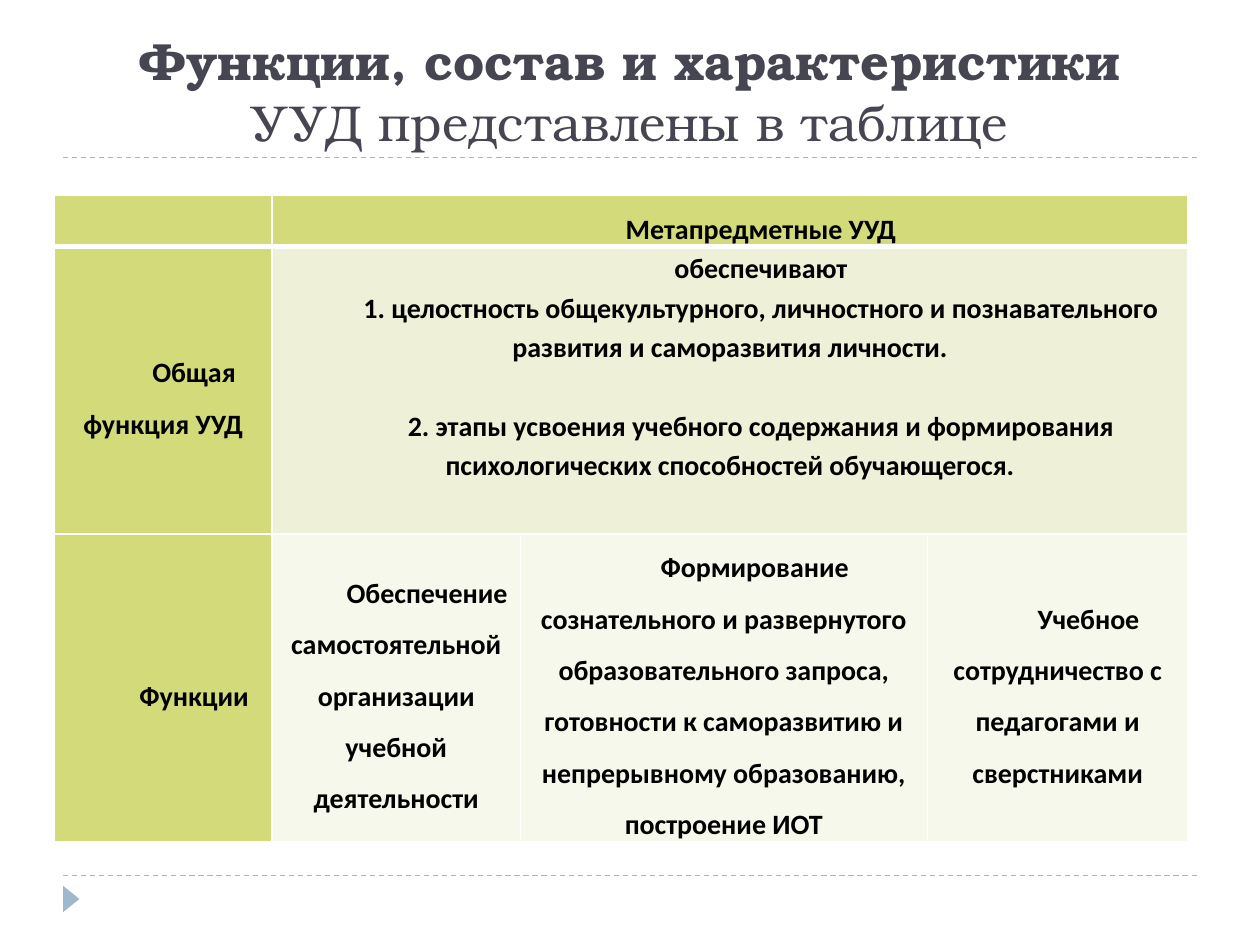
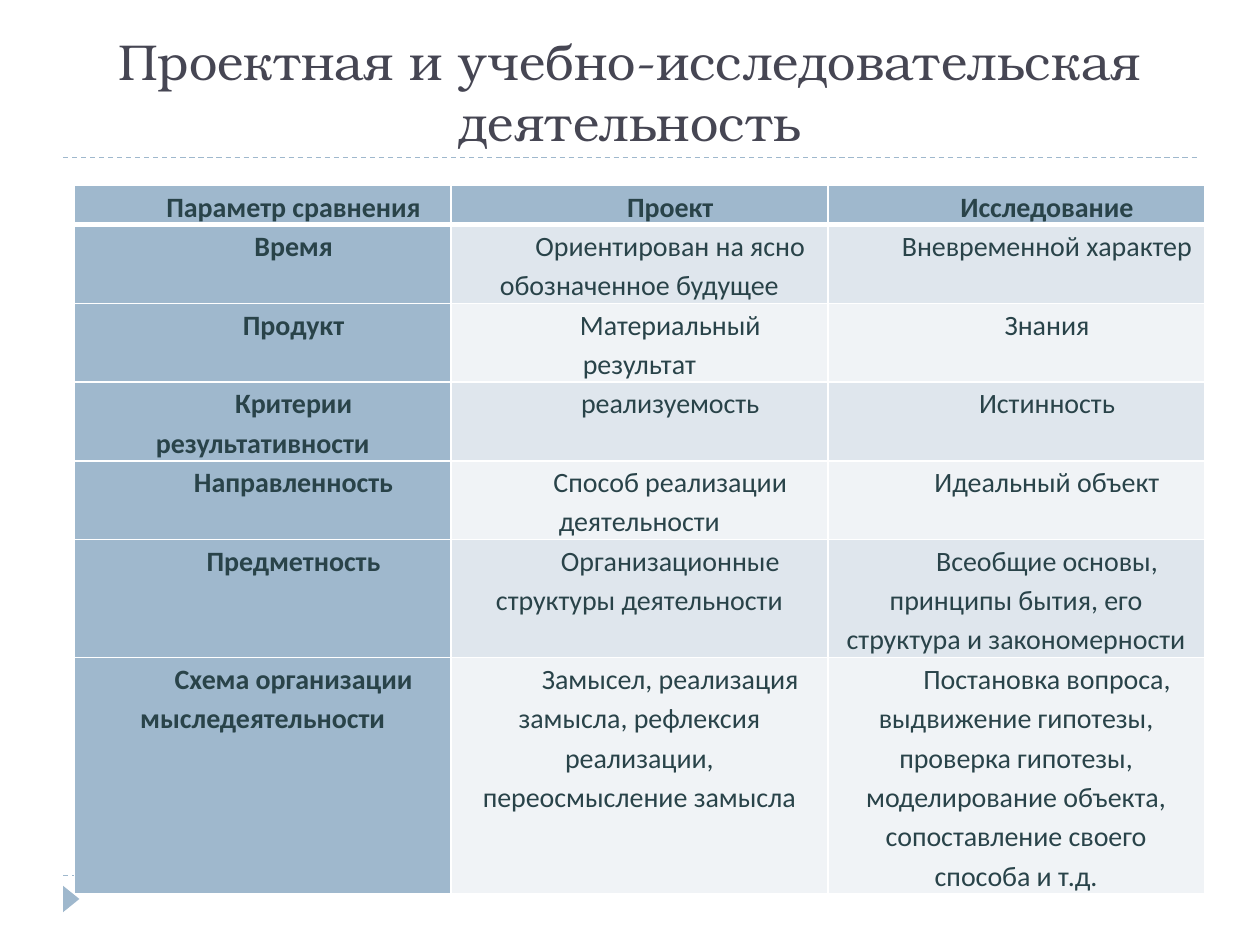
from dataclasses import dataclass

from lxml.etree import SubElement
from pptx import Presentation
from pptx.dml.color import RGBColor
from pptx.enum.dml import MSO_LINE
from pptx.enum.shapes import MSO_CONNECTOR, MSO_SHAPE
from pptx.enum.text import MSO_ANCHOR, MSO_AUTO_SIZE, PP_ALIGN
from pptx.oxml.ns import qn
from pptx.slide import Slide
from pptx.table import Table, _Cell
from pptx.util import Inches, Pt

WHITE = RGBColor(0xFF, 0xFF, 0xFF)
BLACK = RGBColor(0x00, 0x00, 0x00)
SLATE = RGBColor(0x46, 0x46, 0x53)
TEAL = RGBColor(0x29, 0x43, 0x49)
BLUE = RGBColor(0x9F, 0xB8, 0xCD)
MIST = RGBColor(0xDF, 0xE6, 0xED)
PALE = RGBColor(0xF0, 0xF3, 0xF6)
LIME = RGBColor(0xD2, 0xDA, 0x7A)
CREAM = RGBColor(0xEE, 0xF1, 0xD7)
IVORY = RGBColor(0xF7, 0xF8, 0xEC)

SERIF = "TeX Gyre Bonum"
SANS = "Calibri"
LINE = 0.31


@dataclass
class Part:
    text: str
    bold: bool = False


@dataclass
class Grid:
    left: float
    top: float
    widths: list[float]
    heights: list[float]
    rows: list[list[str]]
    accent: RGBColor
    bands: tuple[RGBColor, RGBColor]
    ink: RGBColor
    spacing: float
    anchor: MSO_ANCHOR
    bold: bool


def add_rule(slide: Slide, top: float) -> None:
    rule = slide.shapes.add_connector(
        MSO_CONNECTOR.STRAIGHT, Inches(0.5), Inches(top), Inches(9.5), Inches(top))
    rule.line.color.rgb = BLUE
    rule.line.width = Pt(0.75)
    rule.line.dash_style = MSO_LINE.DASH
    SubElement(rule._element.spPr, qn("a:effectLst"))


def add_frame(slide: Slide) -> None:
    for top in (6.95, 1.25):
        add_rule(slide, top)
    mark = slide.shapes.add_shape(
        MSO_SHAPE.ISOSCELES_TRIANGLE, Inches(0.46), Inches(7.07), Inches(0.21), Inches(0.13))
    mark.rotation = 90
    mark.shadow.inherit = False
    mark.fill.solid()
    mark.fill.fore_color.rgb = BLUE
    mark.line.fill.background()


def set_title(slide: Slide, parts: list[Part]) -> None:
    title = slide.shapes.title
    title.left, title.top = Inches(0.5), Inches(0.17)
    title.width, title.height = Inches(9), Inches(1.08)
    frame = title.text_frame
    frame.word_wrap = True
    frame.auto_size = MSO_AUTO_SIZE.NONE
    frame.vertical_anchor = MSO_ANCHOR.BOTTOM
    para = frame.paragraphs[0]
    para.alignment = PP_ALIGN.CENTER
    for part in parts:
        run = para.add_run()
        run.text = part.text
        run.font.name = SERIF
        run.font.size = Pt(28.8)
        run.font.bold = part.bold
        run.font.color.rgb = SLATE


def set_border(cell: _Cell, row: int) -> None:
    sides = {"L": 1, "R": 1, "T": 3 if row == 1 else 1, "B": 3 if row == 0 else 1}
    props = cell._tc.get_or_add_tcPr()
    for side, width in sides.items():
        edge = SubElement(props, qn(f"a:ln{side}"), w=str(Pt(width)))
        fill = SubElement(edge, qn("a:solidFill"))
        SubElement(fill, qn("a:srgbClr"), val=str(WHITE))


def set_text(cell: _Cell, text: str, grid: Grid, bold: bool) -> None:
    cell.text_frame.text = text
    cell.vertical_anchor = grid.anchor
    cell.margin_left = cell.margin_right = Inches(0.07)
    cell.margin_top = cell.margin_bottom = 0
    for para in cell.text_frame.paragraphs:
        para.alignment = PP_ALIGN.CENTER
        para.line_spacing = grid.spacing
        para._p.get_or_add_pPr().set("indent", str(Inches(0.49)))
        para.font.size = Pt(16)
        for run in para.runs:
            run.font.name = SANS
            run.font.size = Pt(16)
            run.font.bold = bold
            run.font.color.rgb = grid.ink


def add_grid(slide: Slide, grid: Grid) -> Table:
    table = slide.shapes.add_table(
        len(grid.heights), len(grid.widths), Inches(grid.left), Inches(grid.top),
        Inches(sum(grid.widths)), Inches(sum(grid.heights))).table
    table.first_row = table.horz_banding = False
    for column, width in zip(table.columns, grid.widths):
        column.width = Inches(width)
    for r, (height, texts) in enumerate(zip(grid.heights, grid.rows)):
        table.rows[r].height = Inches(height)
        for c in range(len(grid.widths)):
            cell = table.cell(r, c)
            head = r == 0 or c == 0
            set_border(cell, r)
            cell.fill.solid()
            cell.fill.fore_color.rgb = grid.accent if head else grid.bands[(r - 1) % 2]
            if c < len(texts):
                set_text(cell, texts[c], grid, head or grid.bold)
    return table


def add_slide(deck: Presentation, parts: list[Part], grid: Grid) -> Table:
    slide = deck.slides.add_slide(deck.slide_layouts[5])
    set_title(slide, parts)
    add_frame(slide)
    return add_grid(slide, grid)


def add_skills(deck: Presentation) -> None:
    aims = "\n".join([
        "обеспечивают",
        "1. целостность общекультурного, личностного и познавательного развития "
        "и саморазвития личности.",
        "2. этапы усвоения учебного содержания и формирования психологических "
        "способностей обучающегося.",
    ])
    grid = Grid(
        0.43, 1.55, [1.73, 1.97, 3.23, 2.07], [0.4, 2.28, 2.44],
        [
            ["", "Метапредметные УУД"],
            ["Общая функция УУД", aims],
            ["Функции",
             "Обеспечение самостоятельной организации учебной деятельности",
             "Формирование сознательного и развернутого образовательного запроса, "
             "готовности к саморазвитию и непрерывному образованию, построение ИОТ",
             "Учебное сотрудничество с педагогами и сверстниками"],
        ],
        LIME, (CREAM, IVORY), BLACK, 1.5, MSO_ANCHOR.MIDDLE, True)
    parts = [Part("Функции, состав и характеристики", True),
             Part(" УУД представлены в таблице")]
    table = add_slide(deck, parts, grid)
    for row in (0, 1):
        table.cell(row, 1).merge(table.cell(row, 3))
    wide = table.cell(1, 1)
    wide.margin_bottom = Inches(0.4)
    paras = wide.text_frame.paragraphs
    for para in paras:
        para.line_spacing = 1.15
    paras[-1].space_before = Pt(22.5)


def add_study(deck: Presentation) -> None:
    grid = Grid(
        0.59, 1.47, [2.99] * 3, [LINE * count for count in (1, 2, 2, 2, 2, 3, 6)],
        [
            ["Параметр сравнения", "Проект", "Исследование"],
            ["Время", "Ориентирован на ясно обозначенное будущее", "Вневременной характер"],
            ["Продукт", "Материальный результат", "Знания"],
            ["Критерии результативности", "реализуемость", "Истинность"],
            ["Направленность", "Способ реализации деятельности", "Идеальный объект"],
            ["Предметность", "Организационные структуры деятельности",
             "Всеобщие основы, принципы бытия, его структура и закономерности"],
            ["Схема организации мыследеятельности",
             "Замысел, реализация замысла, рефлексия реализации, переосмысление замысла",
             "Постановка вопроса, выдвижение гипотезы, проверка гипотезы, "
             "моделирование объекта, сопоставление своего способа и т.д."],
        ],
        BLUE, (MIST, PALE), TEAL, 1.15, MSO_ANCHOR.TOP, False)
    add_slide(deck, [Part("Проектная и учебно-исследовательская деятельность")], grid)


def main() -> None:
    deck = Presentation()
    deck.slide_width, deck.slide_height = Inches(10), Inches(7.5)
    add_skills(deck)
    add_study(deck)
    deck.save("out.pptx")


if __name__ == "__main__":
    main()
